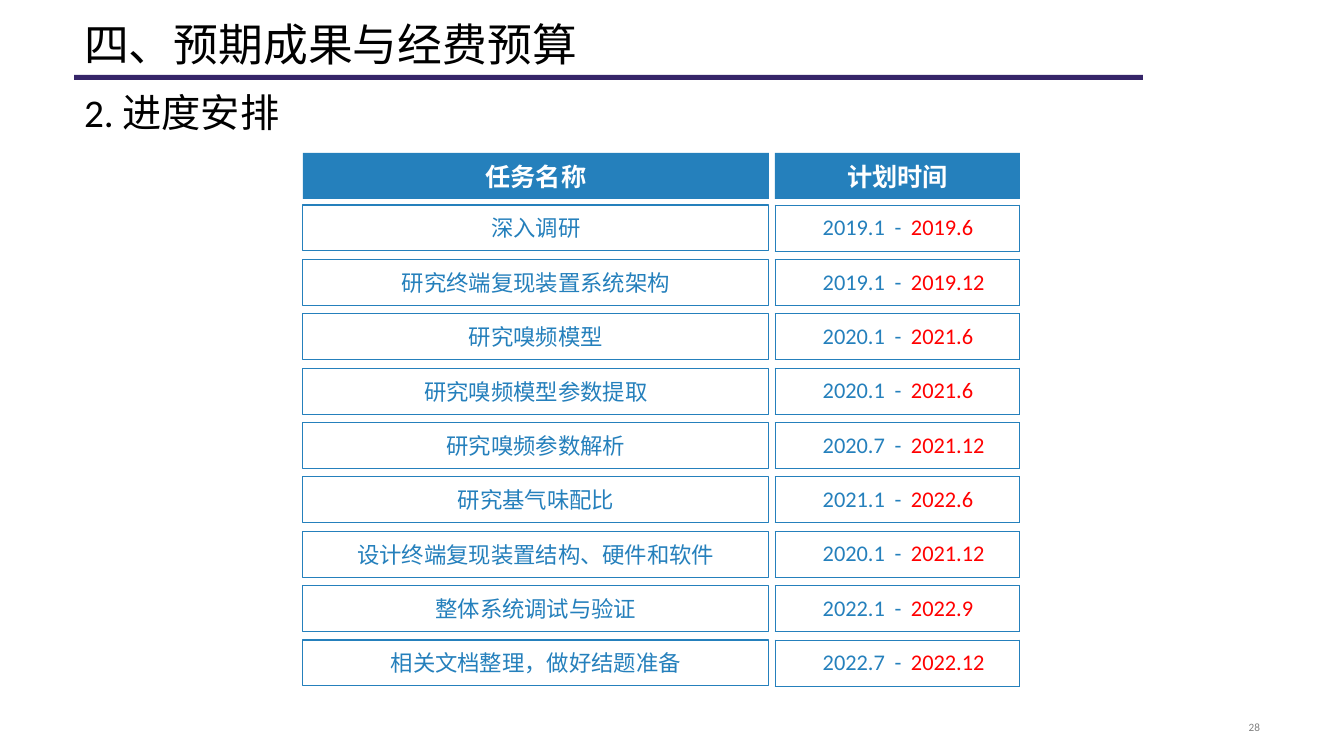
from pptx import Presentation
from pptx.dml.color import RGBColor
from pptx.enum.shapes import MSO_SHAPE
from pptx.enum.text import MSO_ANCHOR as ANCHOR, MSO_AUTO_SIZE as AUTO, PP_ALIGN as ALIGN
from pptx.oxml import parse_xml
from pptx.oxml.ns import nsdecls
from pptx.util import Emu, Pt

TITLE = "四、预期成果与经费预算"
SUBTITLE = "2. 进度安排"
PAGE = "28"
HEADERS = ["任务名称", "计划时间"]
TASKS = [
    ("深入调研", "2019.1", "2019.6"),
    ("研究终端复现装置系统架构", "2019.1", "2019.12"),
    ("研究嗅频模型", "2020.1", "2021.6"),
    ("研究嗅频模型参数提取", "2020.1", "2021.6"),
    ("研究嗅频参数解析", "2020.7", "2021.12"),
    ("研究基气味配比", "2021.1", "2022.6"),
    ("设计终端复现装置结构、硬件和软件", "2020.1", "2021.12"),
    ("整体系统调试与验证", "2022.1", "2022.9"),
    ("相关文档整理，做好结题准备", "2022.7", "2022.12"),
]
COLORS = {"blue": "2580BC", "red": "FF0000", "rule": "362569",
          "black": "000000", "white": "FFFFFF", "gray": "808080"}

NAME_X, NAME_W = 303, 466
TIME_X, TIME_W = 775, 245
TIME_COLS = [110, 26, 109]
HEADER_Y, FIRST_Y, LAST_Y, ROW_H = 153, 205, 640, 46
STEP = (LAST_Y - FIRST_Y) / (len(TASKS) - 1)


def px(n):
    return Emu(round(n * 914400 / 100.8))


def box(*lengths):
    return [px(n) for n in lengths]


def rgb(name):
    return RGBColor.from_string(COLORS[name])


def write(tf, text, size, color, align, bold=False):
    p = tf.paragraphs[0]
    p.alignment = align
    r = p.add_run()
    r.text = text
    for key, value in {"name": "Calibri", "size": Pt(size), "bold": bold}.items():
        setattr(r.font, key, value)
    r.font.color.rgb = rgb(color)
    return p


def place(ph, area, anchor):
    ph.left, ph.top, ph.width, ph.height = box(*area)
    tf = ph.text_frame
    for key, value in {"auto_size": AUTO.NONE, "word_wrap": True,
                       "vertical_anchor": anchor}.items():
        setattr(tf, key, value)
    return tf


def add_rect(s, area, fill=None, line=None):
    sp = s.shapes.add_shape(MSO_SHAPE.RECTANGLE, *box(*area))
    sp.shadow.inherit = False
    if fill:
        sp.fill.solid()
        sp.fill.fore_color.rgb = rgb(fill)
    else:
        sp.fill.background()
    if line:
        sp.line.color.rgb = rgb(line)
        sp.line.width = Pt(0.75)
    else:
        sp.line.fill.background()
    sp.text_frame.vertical_anchor = ANCHOR.MIDDLE
    return sp


def set_borders(cell, sides):
    paint = f'<a:solidFill><a:srgbClr val="{COLORS["blue"]}"/></a:solidFill>'
    for side in "LRTB":
        cell._tc.get_or_add_tcPr().append(parse_xml(
            f'<a:ln{side} {nsdecls("a")} w="9525">'
            f'{paint if side in sides else "<a:noFill/>"}</a:ln{side}>'))


def add_period(s, y, start, end):
    table = s.shapes.add_table(1, 3, *box(TIME_X, y, TIME_W, ROW_H)).table
    table.first_row = table.horz_banding = False
    table.rows[0].height = px(ROW_H)
    parts = [(start, "blue", ALIGN.RIGHT, "LTB"),
             ("-", "blue", ALIGN.CENTER, "TB"),
             (end, "red", ALIGN.LEFT, "RTB")]
    for i, (text, color, align, sides) in enumerate(parts):
        table.columns[i].width = px(TIME_COLS[i])
        cell = table.cell(0, i)
        set_borders(cell, sides)
        cell.fill.background()
        for key, value in {"margin_left": 0, "margin_right": 0,
                           "vertical_anchor": ANCHOR.MIDDLE}.items():
            setattr(cell, key, value)
        write(cell.text_frame, text, 16, color, align)


def main():
    prs = Presentation()
    prs.slide_width, prs.slide_height = box(1344, 756)
    s = prs.slides.add_slide(prs.slide_layouts[1])

    title, body = s.placeholders
    tf = place(title, (74, 0, 1196, 76), ANCHOR.BOTTOM)
    write(tf, TITLE, 32, "black", ALIGN.LEFT).line_spacing = 0.9

    tf = place(body, (74, 87, 1196, 55), ANCHOR.MIDDLE)
    pPr = tf.paragraphs[0]._p.get_or_add_pPr()
    pPr.set("marL", "0")
    pPr.set("indent", "0")
    pPr.append(parse_xml(f'<a:buNone {nsdecls("a")}/>'))
    p = write(tf, SUBTITLE, 28, "black", ALIGN.LEFT)
    p.line_spacing, p.space_before = 0.9, Pt(0)

    add_rect(s, (74, 75, 1069, 5), fill="rule")
    number = s.shapes.add_textbox(*box(950, 716, 320, 23))
    tf = place(number, (950, 716, 320, 23), ANCHOR.MIDDLE)
    write(tf, PAGE, 8, "gray", ALIGN.RIGHT)

    for text, x, w in zip(HEADERS, (NAME_X, TIME_X), (NAME_W, TIME_W)):
        sp = add_rect(s, (x, HEADER_Y, w, ROW_H), fill="blue")
        write(sp.text_frame, text, 18, "white", ALIGN.CENTER, bold=True)

    for i, (task, start, end) in enumerate(TASKS):
        y = FIRST_Y + i * STEP
        sp = add_rect(s, (NAME_X, y, NAME_W, ROW_H), line="blue")
        write(sp.text_frame, task, 16, "blue", ALIGN.CENTER)
        add_period(s, y, start, end)

    prs.save("out.pptx")


if __name__ == "__main__":
    main()
